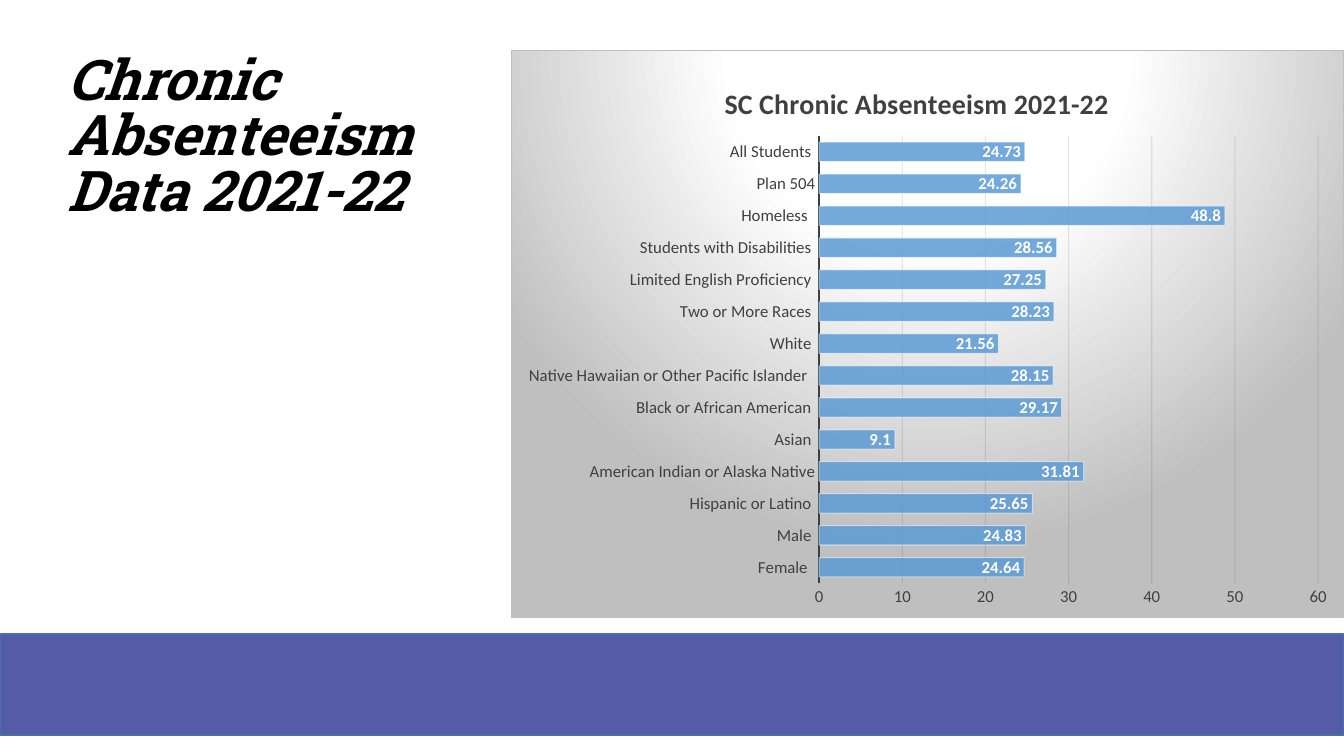
from lxml import etree
from pptx import Presentation
from pptx.chart.data import CategoryChartData
from pptx.dml.color import RGBColor
from pptx.enum.chart import XL_CHART_TYPE, XL_LABEL_POSITION, XL_TICK_MARK
from pptx.enum.shapes import MSO_SHAPE
from pptx.enum.text import MSO_ANCHOR
from pptx.oxml import parse_xml
from pptx.oxml.ns import qn
from pptx.util import Cm, Pt

NS = ('xmlns:a="http://schemas.openxmlformats.org/drawingml/2006/main" '
      'xmlns:c="http://schemas.openxmlformats.org/drawingml/2006/chart"')

# Chart rows, from the bottom bar to the top one
RATES = [
    ("Female  ", 24.64), ("Male ", 24.83), ("Hispanic or Latino ", 25.65),
    ("American Indian or Alaska Native", 31.81), ("Asian ", 9.1),
    ("Black or African American ", 29.17),
    ("Native Hawaiian or Other Pacific Islander  ", 28.15),
    ("White ", 21.56), ("Two or More Races ", 28.23),
    ("Limited English Proficiency ", 27.25),
    ("Students with Disabilities ", 28.56), ("Homeless  ", 48.8),
    ("Plan 504", 24.26), ("All Students ", 24.73),
]


def rgb(value):
    return RGBColor.from_string(value)


def set_attrs(obj, values):
    for name, value in values.items():
        setattr(obj, name, value)


def set_font(font, color, **values):
    set_attrs(font, values)
    font.color.rgb = rgb(color)


def set_line(line, color, width):
    line.color.rgb = rgb(color)
    line.width = Pt(width)


def find_part(chart, *tags):
    """First chart element reached through the given tags."""
    return chart.element.find(".//" + "/".join(qn(tag) for tag in tags))


def set_alpha(fmt, percent):
    """Make the solid colour of a fill or line element see-through."""
    color = fmt.find(qn("a:solidFill"))[0]
    etree.SubElement(color, qn("a:alpha")).set("val", str(percent * 1000))


def layout_xml(x, y, w=None, h=None):
    """Manual layout in fractions of the chart area."""
    target = '<c:layoutTarget val="inner"/>' if w else ""
    size = f'<c:w val="{w}"/><c:h val="{h}"/>' if w else ""
    return parse_xml(
        f'<c:layout {NS}><c:manualLayout>{target}<c:xMode val="edge"/>'
        f'<c:yMode val="edge"/><c:x val="{x}"/><c:y val="{y}"/>{size}'
        '</c:manualLayout></c:layout>')


def drop_layout(parent):
    for layout in parent.findall(qn("c:layout")):
        parent.remove(layout)


def add_band(s, box, fill, line):
    sp = s.shapes.add_shape(MSO_SHAPE.RECTANGLE, *map(Cm, box))
    sp.shadow.inherit = False
    sp.fill.solid()
    sp.fill.fore_color.rgb = rgb(fill)
    set_line(sp.line, line, 1)


def add_heading(s, box, text):
    tf = s.shapes.add_textbox(*map(Cm, box)).text_frame
    set_attrs(tf, {"word_wrap": True, "vertical_anchor": MSO_ANCHOR.BOTTOM})
    p = tf.paragraphs[0]
    p.line_spacing = 0.82
    r = p.add_run()
    r.text = text
    set_font(r.font, "000000", name="Roboto Slab", size=Pt(40), bold=True, italic=True)


def style_background(chart):
    """Radial grey gradient behind the whole chart."""
    stops = "".join(
        f'<a:gs pos="{pos * 1000}"><a:srgbClr val="{color}"/></a:gs>'
        for pos, color in [(0, "FFFFFF"), (39, "FFFFFF"), (100, "BFBFBF")])
    find_part(chart, "c:chart").addnext(parse_xml(
        f'<c:spPr {NS}><a:gradFill><a:gsLst>{stops}</a:gsLst><a:path path="circle">'
        '<a:fillToRect l="50000" t="-80000" r="50000" b="180000"/></a:path></a:gradFill>'
        '<a:ln w="9525"><a:solidFill><a:srgbClr val="BFBFBF"/></a:solidFill></a:ln></c:spPr>'))


def style_title(chart, text):
    tf = chart.chart_title.text_frame
    r = tf.paragraphs[0].add_run()
    r.text = text
    set_font(r.font, "404040", name="Calibri", size=Pt(20), bold=True)
    title = find_part(chart, "c:title")
    drop_layout(title)
    title.find(qn("c:tx")).addnext(layout_xml(0.25, 0.05))


def style_axes(chart):
    for axis in (chart.category_axis, chart.value_axis):
        set_attrs(axis, {"major_tick_mark": XL_TICK_MARK.NONE,
                         "minor_tick_mark": XL_TICK_MARK.NONE})
        set_font(axis.tick_labels.font, "404040", name="Calibri", size=Pt(12))
    set_line(chart.category_axis.format.line, "404040", 1.5)
    values = chart.value_axis
    set_attrs(values, {"minimum_scale": 0, "maximum_scale": 60, "major_unit": 10,
                       "has_major_gridlines": True})
    values.format.line.fill.background()
    set_line(values.major_gridlines.format.line, "0D0D0D", 0.75)
    set_alpha(find_part(chart, "c:majorGridlines", "c:spPr", "a:ln"), 10)


def style_bars(chart):
    plot = chart.plots[0]
    set_attrs(plot, {"gap_width": 65, "vary_by_categories": False, "has_data_labels": True})
    series = plot.series[0]
    series.invert_if_negative = False
    series.format.fill.solid()
    series.format.fill.fore_color.rgb = rgb("5B9BD5")
    set_line(series.format.line, "FFFFFF", 0.75)
    set_alpha(find_part(chart, "c:ser", "c:spPr"), 85)
    set_alpha(find_part(chart, "c:ser", "c:spPr", "a:ln"), 50)
    labels = plot.data_labels
    set_attrs(labels, {"show_value": True, "position": XL_LABEL_POSITION.INSIDE_END})
    set_font(labels.font, "FFFFFF", name="Calibri", size=Pt(12), bold=True)


def add_rate_chart(s, box, title, rows):
    data = CategoryChartData()
    data.categories = [name for name, _ in rows]
    data.add_series("Series 1", [rate for _, rate in rows])
    chart = s.shapes.add_chart(XL_CHART_TYPE.BAR_CLUSTERED, *map(Cm, box), data).chart
    chart.has_legend = False
    set_font(chart.font, "000000", name="Calibri", size=Pt(10))
    style_background(chart)
    style_title(chart, title)
    style_axes(chart)
    style_bars(chart)
    plot_area = find_part(chart, "c:plotArea")
    drop_layout(plot_area)
    plot_area.insert(0, layout_xml(0.37, 0.15, 0.6, 0.79))


def main():
    prs = Presentation()
    set_attrs(prs, {"slide_width": Cm(33.87), "slide_height": Cm(19.05)})
    s = prs.slides.add_slide(prs.slide_layouts[6])

    # Footer band
    add_band(s, (0, 15.98, 33.87, 2.54), "565BA7", "43739E")
    # Heading
    add_heading(s, (1.45, 1.27, 11.43, 4.45), "Chronic Absenteeism Data 2021-22")
    # Absenteeism rates by student group
    add_rate_chart(s, (12.88, 1.27, 20.98, 14.3), "SC Chronic Absenteeism 2021-22", RATES)

    prs.save("out.pptx")


if __name__ == "__main__":
    main()
